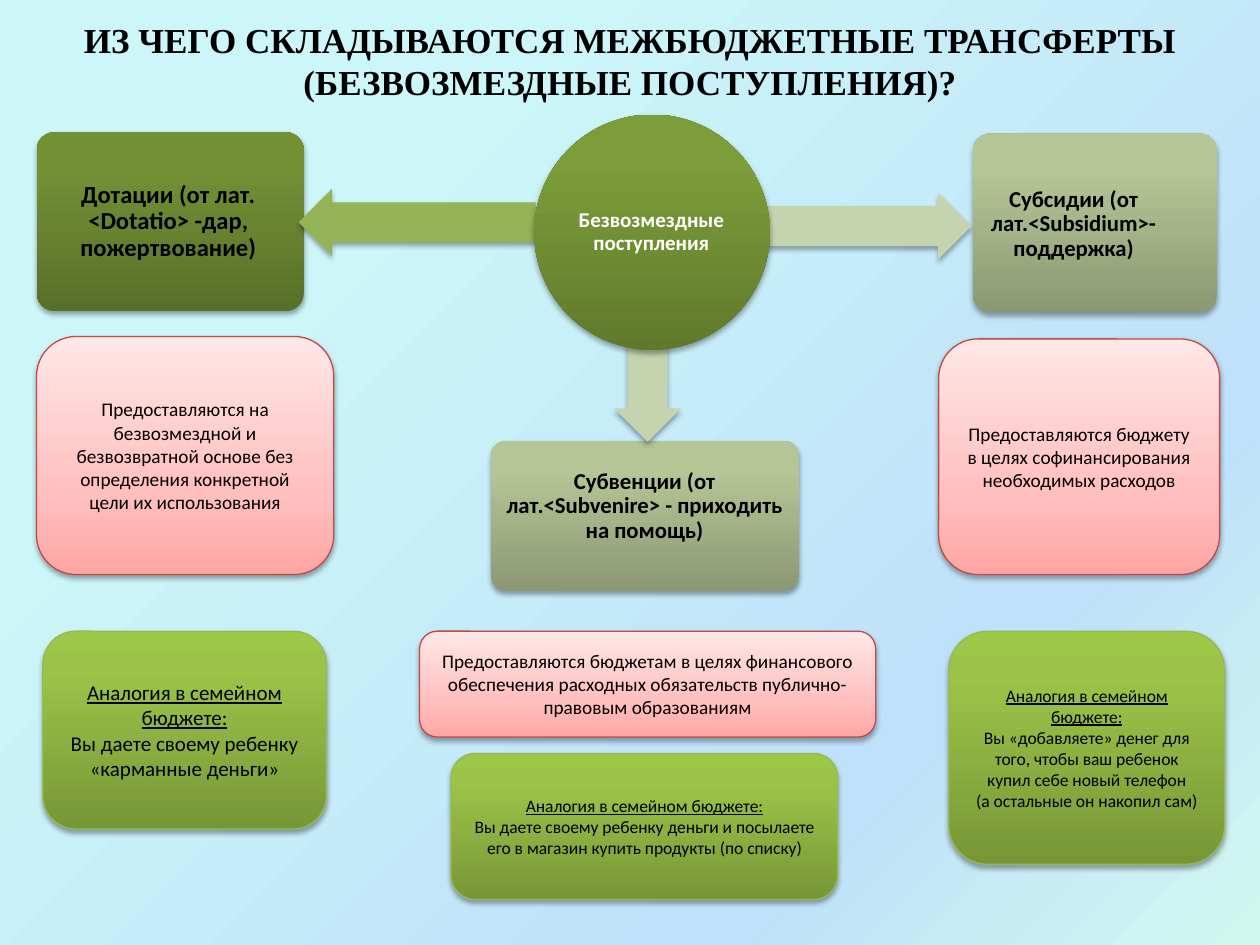
from dataclasses import dataclass

from lxml import etree
from pptx import Presentation
from pptx import util as u
from pptx.dml.color import RGBColor
from pptx.enum import shapes, text
from pptx.oxml.ns import qn

COLUMNS, ROWS = 100, 75
CELL = u.Inches(0.1)
KIND = shapes.MSO_SHAPE

OLIVE = ((0, "596F29"), (80, "739035"), (100, "749334"))
SAGE = ((0, "8B9873"), (80, "B5C596"), (100, "B6C795"))
PINK = ((0, "FFA6A5"), (35, "FFC0BF"), (100, "FFE7E7"))
GREEN = ((0, "779737"), (80, "9BC348"), (100, "9DC746"))
CIRCLE = ((0, "60792C"), (80, "7C9D39"), (100, "7D9F38"))
SKY = ((25, "CCF6F8"), (75, "BFE1F9"), (100, "D2F7EF"))
ANALOGY = "Аналогия в семейном бюджете:"


@dataclass
class Area:
    column: float
    row: float
    columns: float
    rows: float

    def lengths(self) -> list[int]:
        return [round(n * CELL) for n in (self.column, self.row, self.columns, self.rows)]


@dataclass
class Transfer:
    area: Area
    stops: tuple
    label_area: Area
    label: str
    size: int


@dataclass
class Arrow:
    area: Area
    rotation: int
    color: str


@dataclass
class Card:
    area: Area
    stops: tuple
    line: str
    lines: tuple
    size: int
    heading: bool = False


TRANSFERS = (
    Transfer(Area(2.9, 10.5, 21.2, 14.2), OLIVE, Area(3.4, 10.9, 19.9, 13.4),
             "Дотации (от лат. <Dotatio> -дар, пожертвование)", 14),
    Transfer(Area(77.2, 10.6, 19.4, 14.2), SAGE, Area(75.7, 11.1, 19, 13.4),
             "Субсидии (от лат.<Subsidium>-поддержка)", 13),
    Transfer(Area(39, 35, 24.4, 11.9), SAGE, Area(39.5, 35.4, 23.3, 9.6),
             "Субвенции (от лат.<Subvenire> - приходить на помощь)", 13),
)
ARROWS = (
    Arrow(Area(23.7, 15, 18.8, 5.3), 0, "94B355"),
    Arrow(Area(60.8, 15.3, 16.3, 5.3), 180, "C6D3AF"),
    Arrow(Area(47.5, 28.5, 7.8, 5.3), 270, "C6D3AF"),
)
CARDS = (
    Card(Area(2.9, 26.7, 23.6, 18.9), PINK, "BF4C48",
         ("Предоставляются на безвозмездной и безвозвратной основе без "
          "определения конкретной цели их использования",), 11),
    Card(Area(3.4, 50.1, 22.5, 15.7), GREEN, "98B955",
         (ANALOGY, "Вы даете своему ребенку «карманные деньги»"), 12, True),
    Card(Area(33.3, 50.1, 36.2, 8.4), PINK, "BF4C48",
         ("Предоставляются бюджетам в целях финансового обеспечения "
          "расходных обязательств публично-правовым образованиям",), 11),
    Card(Area(35.8, 59.8, 30.7, 11.6), GREEN, "98B955",
         (ANALOGY, "Вы даете своему ребенку деньги и посылаете его в магазин "
          "купить продукты (по списку)"), 10, True),
    Card(Area(74.5, 26.9, 22.3, 18.7), PINK, "BF4C48",
         ("Предоставляются бюджету в целях софинансирования необходимых расходов",), 11),
    Card(Area(75.3, 50.1, 21.9, 18.5), GREEN, "98B955",
         (ANALOGY, "Вы «добавляете» денег для того, чтобы ваш ребенок купил себе "
          "новый телефон", "(а остальные он накопил сам)"), 10, True),
)


def rgb(color: str) -> RGBColor:
    return RGBColor.from_string(color)


def add_shadow(effects, opacity: int = 35) -> None:
    shadow = etree.SubElement(effects, qn("a:outerShdw"), blurRad=str(u.Pt(3.1)),
                              dist=str(u.Pt(1.8)), dir="5400000", rotWithShape="0")
    color = etree.SubElement(shadow, qn("a:srgbClr"), val="000000")
    etree.SubElement(color, qn("a:alpha"), val=str(opacity * 1000))


def set_gradient(shape, stops: tuple, angle: int = 90) -> None:
    shape.fill.gradient()
    shape.fill.gradient_angle = angle
    stop_list = shape._element.spPr.find(qn("a:gradFill")).find(qn("a:gsLst"))
    for stop in list(stop_list):
        stop_list.remove(stop)
    for position, color in stops:
        stop = etree.SubElement(stop_list, qn("a:gs"), pos=str(position * 1000))
        etree.SubElement(stop, qn("a:srgbClr"), val=color)


def add_shape(slide, kind, area: Area, fill, line: str = "", shadow: bool = True):
    shape = slide.shapes.add_shape(kind, *area.lengths())
    if isinstance(fill, str):
        shape.fill.solid()
        shape.fill.fore_color.rgb = rgb(fill)
    else:
        set_gradient(shape, fill)
    if line:
        shape.line.color.rgb = rgb(line)
        shape.line.width = u.Pt(0.75)
    else:
        shape.line.fill.background()
    shape.shadow.inherit = False
    if shadow:
        add_shadow(shape._element.spPr.find(qn("a:effectLst")))
    return shape


def write(shape, lines: tuple, size: int, color: str = "000000", bold: bool = False,
          heading: bool = False, font: str = "Calibri", spacing: float = 1.0) -> None:
    frame = shape.text_frame
    frame.word_wrap = True
    frame.vertical_anchor = text.MSO_ANCHOR.MIDDLE
    for index, line in enumerate(lines):
        paragraph = frame.paragraphs[0] if index == 0 else frame.add_paragraph()
        paragraph.text = line
        paragraph.alignment = text.PP_ALIGN.CENTER
        paragraph.line_spacing = spacing
        paragraph.font.name = font
        paragraph.font.size = u.Pt(size)
        paragraph.font.bold = bold
        paragraph.font.underline = heading and index == 0
        paragraph.font.color.rgb = rgb(color)


def add_label(slide, area: Area, label: str, size: int, inset: float,
              color: str = "000000") -> None:
    box = slide.shapes.add_textbox(*area.lengths())
    frame = box.text_frame
    frame.margin_left = frame.margin_right = u.Inches(inset)
    frame.margin_top = frame.margin_bottom = u.Inches(inset)
    write(box, (label,), size, color, bold=True, spacing=0.9)


def add_title(slide) -> None:
    title = slide.shapes.add_textbox(*Area(1.2, 1, 97.6, 6.8).lengths())
    write(title, ("ИЗ ЧЕГО СКЛАДЫВАЮТСЯ МЕЖБЮДЖЕТНЫЕ ТРАНСФЕРТЫ",
                  "(БЕЗВОЗМЕЗДНЫЕ ПОСТУПЛЕНИЯ)?"), 20, bold=True, font="Times New Roman")
    title.text_frame.vertical_anchor = text.MSO_ANCHOR.TOP
    for paragraph in title.text_frame.paragraphs:
        properties = paragraph.runs[0]._r.get_or_add_rPr()
        add_shadow(etree.SubElement(properties, qn("a:effectLst")), 50)


def main() -> None:
    presentation = Presentation()
    presentation.slide_width = COLUMNS * CELL
    presentation.slide_height = ROWS * CELL
    slide = presentation.slides.add_slide(presentation.slide_layouts[6])

    backdrop = add_shape(slide, KIND.RECTANGLE, Area(0, 0, COLUMNS, ROWS), SKY, shadow=False)
    backdrop.fill.gradient_angle = 315
    add_title(slide)

    for transfer in TRANSFERS:
        box = add_shape(slide, KIND.ROUNDED_RECTANGLE, transfer.area, transfer.stops)
        box.adjustments[0] = 0.1
        add_label(slide, transfer.label_area, transfer.label, transfer.size, 0.03)
    for arrow in ARROWS:
        shape = add_shape(slide, KIND.LEFT_ARROW, arrow.area, arrow.color)
        shape.adjustments[0] = 0.6
        shape.rotation = arrow.rotation
    for card in CARDS:
        shape = add_shape(slide, KIND.ROUNDED_RECTANGLE, card.area, card.stops, card.line)
        write(shape, card.lines, card.size, heading=card.heading)

    add_shape(slide, KIND.OVAL, Area(42.4, 9.1, 18.7, 18.7), CIRCLE)
    add_label(slide, Area(45.1, 11.8, 13.2, 13.2), "Безвозмездные поступления", 12, 0.01, "FFFFFF")
    presentation.save("out.pptx")


if __name__ == "__main__":
    main()
